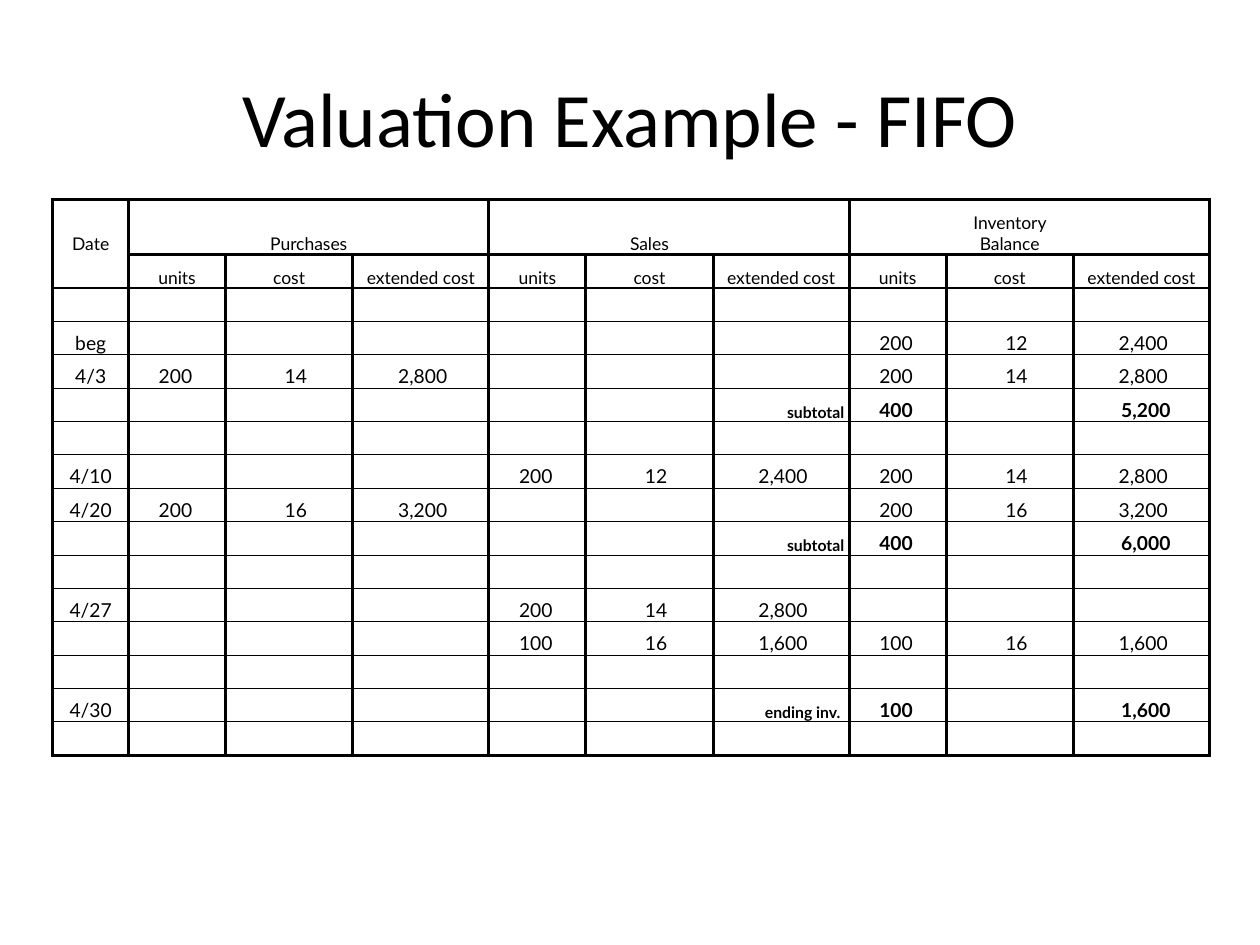
from pptx import Presentation
from pptx.dml.color import RGBColor
from pptx.enum.text import MSO_ANCHOR as ANCHOR, PP_ALIGN as ALIGN
from pptx.oxml.ns import qn
from pptx.util import Inches, Pt
from lxml import etree

BLACK = "000000"
TITLE_FONT, TABLE_FONT = "Calibri", "Lato"
GROUPS = ["Purchases", "Sales", "Inventory Balance"]
HEADINGS = ["units", "cost", "extended cost"]
DATE_WIDTH, GROUP_WIDTHS = 0.6, [0.77, 1.01, 1.08]
GROUP_ROW_HEIGHT = 0.44
NUMBER_INDENTS = [0.24, 0.47, 0.36]
THICK, MEDIUM, THIN = 2, 1, 0.5

# One entry per body row: date, purchases, sales, balance, total label
ENTRIES = [
    ("", None, None, None, ""),
    ("beg", None, None, ("200", "12", "2,400"), ""),
    ("4/3", ("200", "14", "2,800"), None, ("200", "14", "2,800"), ""),
    ("", None, None, ("400", "", "5,200"), "subtotal"),
    ("", None, None, None, ""),
    ("4/10", None, ("200", "12", "2,400"), ("200", "14", "2,800"), ""),
    ("4/20", ("200", "16", "3,200"), None, ("200", "16", "3,200"), ""),
    ("", None, None, ("400", "", "6,000"), "subtotal"),
    ("", None, None, None, ""),
    ("4/27", None, ("200", "14", "2,800"), None, ""),
    ("", None, ("100", "16", "1,600"), ("100", "16", "1,600"), ""),
    ("", None, None, None, ""),
    ("4/30", None, None, ("100", "", "1,600"), "ending inv."),
    ("", None, None, None, ""),
]


def color(hex_code):
    return RGBColor.from_string(hex_code)


def format_run(r, font, size, bold=False):
    r.font.name, r.font.size, r.font.bold = font, Pt(size), bold
    r.font.color.rgb = color(BLACK)


def set_borders(cell, left, right, top, bottom):
    """Draw each edge at its width in points; 0 means no line."""
    tc_pr = cell._tc.get_or_add_tcPr()
    for side, width in zip("LRTB", (left, right, top, bottom)):
        ln = etree.SubElement(tc_pr, qn(f"a:ln{side}"), w=str(Pt(width)))
        if width:
            fill = etree.SubElement(ln, qn("a:solidFill"))
            etree.SubElement(fill, qn("a:srgbClr"), val=BLACK)
        else:
            etree.SubElement(ln, qn("a:noFill"))


def write_cell(cell, text, size=11, bold=False, align=ALIGN.CENTER, left=0.01, right=0.01):
    cell.vertical_anchor = ANCHOR.BOTTOM
    cell.margin_left, cell.margin_right = Inches(left), Inches(right)
    cell.margin_top, cell.margin_bottom = Inches(0.01), 0
    p = cell.text_frame.paragraphs[0]
    p.alignment = align
    if text:
        p.text = text
        format_run(p.runs[0], TABLE_FONT, size, bold)
    else:
        # Keeps an empty cell from stretching its row
        etree.SubElement(p._p, qn("a:endParaRPr"), sz=str(size * 100))


def add_title(slide, x, y, w, h):
    title = slide.shapes.title
    title.left, title.top, title.width, title.height = map(Inches, (x, y, w, h))
    tf = title.text_frame
    tf.text = "Valuation Example - FIFO"
    tf.vertical_anchor = ANCHOR.MIDDLE
    tf.paragraphs[0].alignment = ALIGN.CENTER
    format_run(tf.paragraphs[0].runs[0], TITLE_FONT, 44)


def fill_header(table):
    write_cell(table.cell(0, 0), "Date", 10)
    write_cell(table.cell(1, 0), "", 10)
    for g, group in enumerate(GROUPS):
        first = 1 + 3 * g
        for i, heading in enumerate(HEADINGS):
            # The first group name spans its columns, the others sit in the middle one
            named = i == (0 if g == 0 else 1)
            write_cell(table.cell(0, first + i), group if named else "", 10)
            write_cell(table.cell(1, first + i), heading, 10)
    table.cell(0, 1).merge(table.cell(0, 3))


def fill_entry(table, row, entry):
    date, *groups, label = entry
    write_cell(table.cell(row, 0), date)
    for g, numbers in enumerate(groups):
        bold = bool(label) and g == 2
        for i, number in enumerate(numbers or ("", "", "")):
            cell = table.cell(row, 1 + 3 * g + i)
            if label and (g, i) == (1, 2):
                right = 0.04 if label == "subtotal" else 0.07
                write_cell(cell, label, 9, True, ALIGN.RIGHT, right=right)
            else:
                indent = NUMBER_INDENTS[i] + (0.02 if bold and i == 2 else 0)
                write_cell(cell, number, 11, bold, ALIGN.LEFT, left=indent)


def rule_table(table, n_rows, n_cols):
    # Width of each horizontal line, from the top edge to the bottom edge
    lines = [THICK, THICK, MEDIUM] + [THIN] * (n_rows - 3) + [THICK]
    for row in range(n_rows):
        for col in range(n_cols):
            top, bottom = lines[row], lines[row + 1]
            left = right = THICK
            if col == 0:
                top = 0 if row == 1 else top
                bottom = 0 if row == 0 else bottom
            elif row == 0:
                left = THICK if col % 3 == 1 else 0
                right = THICK if col % 3 == 0 or col == 1 else 0
            cell = table.cell(row, col)
            set_borders(cell, left, right, top, bottom)
            cell.fill.background()


def add_ledger(slide, x, y, w, h):
    widths = [DATE_WIDTH] + GROUP_WIDTHS * len(GROUPS)
    n_rows, n_cols = len(ENTRIES) + 2, len(widths)
    table = slide.shapes.add_table(n_rows, n_cols, *map(Inches, (x, y, w, h))).table
    table.first_row = table.horz_banding = False
    for column, width in zip(table.columns, widths):
        column.width = Inches(width)
    for row in table.rows:
        row.height = Inches((h - GROUP_ROW_HEIGHT) / (n_rows - 1))
    table.rows[0].height = Inches(GROUP_ROW_HEIGHT)

    fill_header(table)
    for row, entry in enumerate(ENTRIES, start=2):
        fill_entry(table, row, entry)
    rule_table(table, n_rows, n_cols)


def main():
    prs = Presentation()
    prs.slide_width, prs.slide_height = Inches(10), Inches(7.5)
    slide = prs.slides.add_slide(prs.slide_layouts[5])
    add_title(slide, 0.5, 0.3, 9, 1.25)
    add_ledger(slide, 0.42, 1.58, 9.17, 4.42)
    prs.save("out.pptx")


if __name__ == "__main__":
    main()
